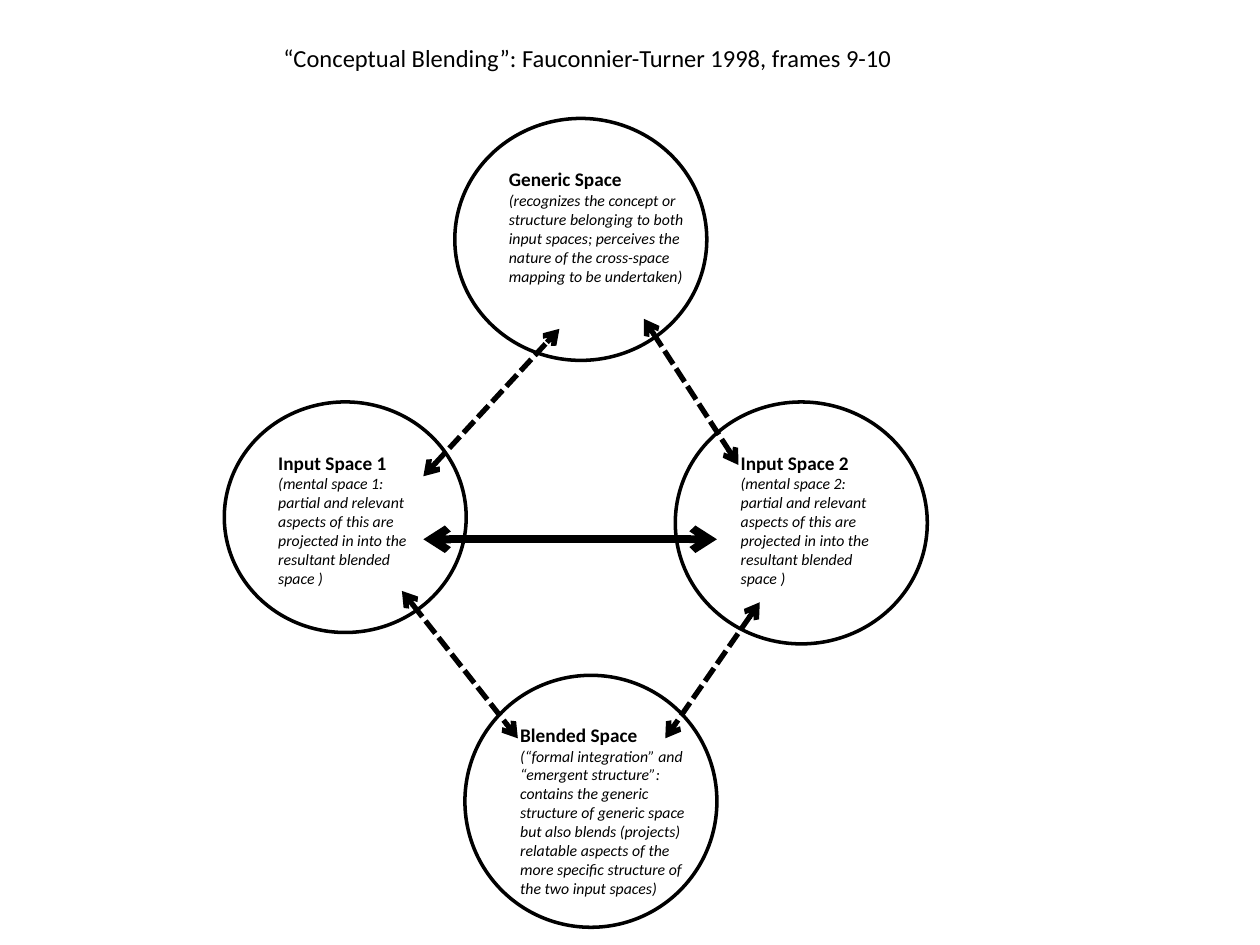
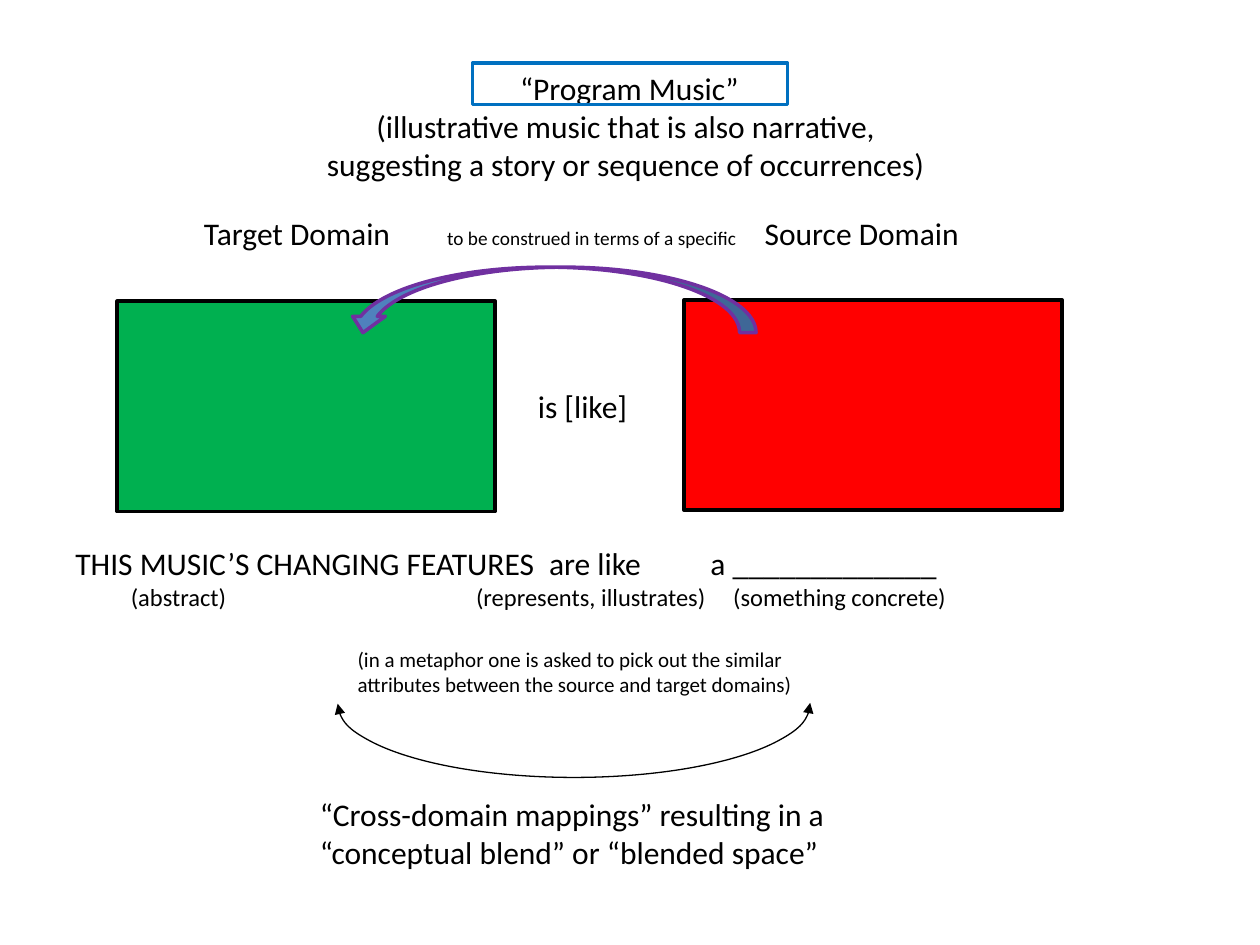
import pptx
import pptx.dml.color
import pptx.enum.shapes
import pptx.enum.text
import pptx.oxml
import pptx.oxml.ns
import pptx.shapes.connector
import pptx.util

SHAPE = pptx.enum.shapes.MSO_SHAPE
ALIGN = pptx.enum.text.PP_ALIGN
FONT = "Calibri"
BLACK = "000000"
DRAWING_NS = pptx.oxml.ns.nsdecls("a")

deck = pptx.Presentation()
deck.slide_width = pptx.util.Inches(10)
deck.slide_height = pptx.util.Inches(7.5)
# The grid has 100 columns and 75 rows of square cells.
CELL = deck.slide_width // 100
blank = deck.slide_layouts[6]


def paint(item, line, width, fill=None, dash=None, heads=None):
    """Colour a shape or connector; heads is the arrowhead kind for both ends."""
    rgb = pptx.dml.color.RGBColor.from_string
    item.line.color.rgb = rgb(line)
    item.line.width = pptx.util.Pt(width)
    outline = item.get_or_add_ln()
    if dash:
        outline.append(pptx.oxml.parse_xml(f'<a:prstDash {DRAWING_NS} val="{dash}"/>'))
    for end in ("headEnd", "tailEnd") if heads else ():
        outline.append(pptx.oxml.parse_xml(f'<a:{end} {DRAWING_NS} type="{heads}"/>'))
    if isinstance(item, pptx.shapes.connector.Connector):
        item._element.spPr.append(pptx.oxml.parse_xml(f"<a:effectLst {DRAWING_NS}/>"))
        return
    item.shadow.inherit = False
    if fill:
        item.fill.solid()
        item.fill.fore_color.rgb = rgb(fill)
    else:
        item.fill.background()


def write(slide, box, paragraphs, align=ALIGN.LEFT):
    """Each paragraph is (tab stops in cells, runs); a run is (text, size, style)."""
    holder = slide.shapes.add_textbox(*[round(v * CELL) for v in box])
    frame = holder.text_frame
    frame.word_wrap = True
    frame.auto_size = pptx.enum.text.MSO_AUTO_SIZE.SHAPE_TO_FIT_TEXT
    for i, (stops, runs) in enumerate(paragraphs):
        paragraph = frame.add_paragraph() if i else frame.paragraphs[0]
        paragraph.alignment = align
        if stops:
            tabs = "".join(f'<a:tab pos="{round(s * CELL)}" algn="l"/>' for s in stops)
            paragraph._p.get_or_add_pPr().append(
                pptx.oxml.parse_xml(f"<a:tabLst {DRAWING_NS}>{tabs}</a:tabLst>"))
        for text, size, style in runs:
            run = paragraph.add_run()
            run.text = text
            run.font.name = FONT
            run.font.size = pptx.util.Pt(size)
            run.font.bold = style == "bold"
            run.font.italic = style == "italic"


# Slide 1: the four mental spaces
blending = deck.slides.add_slide(blank)

INPUT_NOTE = ("(mental space {}: partial and relevant aspects of this are "
              "projected in into the resultant blended space )")
spaces = [
    ("Generic Space", (36.1, 9.4, 20, 19.2), (39.4, 12.8, 15.8, 11.9),
     "(recognizes the concept or structure belonging to both input spaces; "
     "perceives the nature of the cross-space mapping to be undertaken)"),
    ("Input Space 1", (17.8, 31.9, 19.2, 18.3), (21.1, 35.3, 12.5, 11.9), INPUT_NOTE.format(1)),
    ("Input Space 2", (53.6, 31.9, 20, 19.2), (57.8, 35.3, 12.5, 11.9), INPUT_NOTE.format(2)),
    ("Blended Space", (36.9, 53.6, 20, 20), (40.3, 56.9, 15.8, 15),
     "(“formal integration” and “emergent structure”: contains the generic "
     "structure of generic space but also blends (projects) relatable aspects "
     "of the more specific structure of the two input spaces)"),
]
for name, circle_box, label_box, note in spaces:
    circle = blending.shapes.add_shape(SHAPE.OVAL, *[round(v * CELL) for v in circle_box])
    paint(circle, BLACK, 2)

mappings = [
    ((33.6, 37.8, 44.4, 26.1), 3, "sysDash"),
    ((51.1, 25.3, 58.6, 36.9), 3, "sysDash"),
    ((31.9, 46.9, 41.1, 58.6), 3, "sysDash"),
    ((60.3, 47.8, 52.8, 58.6), 3, "sysDash"),
    ((33.6, 42.8, 56.9, 42.8), 4.5, None),
]
for ends, width, dash in mappings:
    mapping = blending.shapes.add_connector(
        pptx.enum.shapes.MSO_CONNECTOR.STRAIGHT, *[round(v * CELL) for v in ends])
    paint(mapping, BLACK, width, dash=dash, heads="arrow")

for name, circle_box, label_box, note in spaces:
    write(blending, label_box, [((), [(name, 11, "bold")]), ((), [(note, 9, "italic")])])

write(blending, (21.5, 2.9, 51.7, 3.4),
      [((), [("“Conceptual Blending”: Fauconnier-Turner 1998, frames 9-10", 14, None)])])

# Slide 2: program music as a metaphor
metaphor = deck.slides.add_slide(blank)

for domain_box, colour in [((9.3, 23.9, 30, 16.7), "00B050"),
                           ((54.3, 23.8, 30, 16.7), "FF0000")]:
    domain = metaphor.shapes.add_shape(SHAPE.RECTANGLE, *[round(v * CELL) for v in domain_box])
    paint(domain, BLACK, 2, fill=colour)

write(metaphor, (15.2, 16.5, 70.8, 4), [
    ((19.3, 44.5), [("Target Domain\t", 18, None),
                    ("to be construed in terms of a specific", 11, None),
                    ("\tSource Domain", 18, None)])])
write(metaphor, (14.1, 5, 71.7, 10.1), [
    ((), [(line, 18, None)]) for line in (
        "“Program Music”",
        "(illustrative music that is also narrative, ",
        "suggesting a story or sequence of occurrences) ")], ALIGN.CENTER)
write(metaphor, (41.7, 30.2, 9.2, 4), [((), [("is [like]", 18, None)])])
write(metaphor, (5, 42.7, 71.7, 6.4), [
    ((37.6, 50.4), [("THIS MUSIC’S CHANGING FEATURES\tare like\ta _____________", 18, None)]),
    ((4.4, 31.8, 52.2),
     [("\t(abstract)\t(represents, illustrates)\t(something concrete)", 14, None)])])

transfer = metaphor.shapes.add_shape(
    SHAPE.CURVED_UP_ARROW, *[round(v * CELL) for v in (27.5, 21.2, 32.5, 5.2)])
transfer.rotation = 180
paint(transfer, "7030A0", 2, fill="4F81BD")

shared_attributes = metaphor.shapes.add_shape(
    SHAPE.ARC, *[round(v * CELL) for v in (26.8, 50, 37.5, 11.7)])
shared_attributes.rotation = 180
shared_attributes.adjustments[0] = 107.87
shared_attributes.adjustments[1] = 0
paint(shared_attributes, BLACK, 0.75, heads="triangle")

write(metaphor, (24.4, 62.6, 45, 7.1), [
    ((), [("“Cross-domain mappings” resulting in a “conceptual blend” or “blended space”",
           18, None)])])
write(metaphor, (27.4, 50.8, 39.2, 5), [
    ((), [("(in a metaphor one is asked to pick out the similar attributes "
           "between the source and target domains)", 12, None)])])

term_frame = metaphor.shapes.add_shape(
    SHAPE.RECTANGLE, *[round(v * CELL) for v in (37.5, 5, 25, 3.3)])
paint(term_frame, "0070C0", 2)

deck.save("out.pptx")
